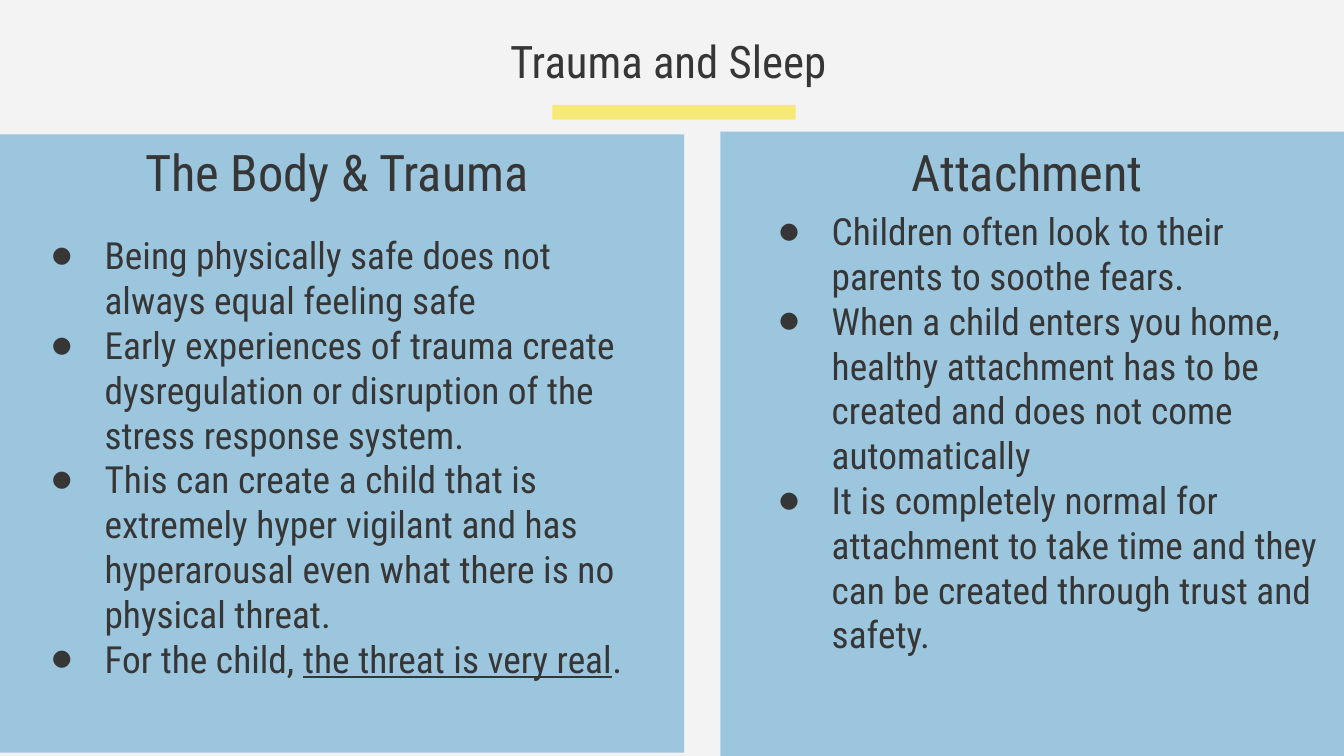
import pptx
import pptx.dml.color
import pptx.enum.shapes
import pptx.enum.text
import pptx.oxml
import pptx.oxml.ns
import pptx.util

Inches = pptx.util.Inches
RGBColor = pptx.dml.color.RGBColor
Anchor = pptx.enum.text.MSO_ANCHOR

BACKGROUND = RGBColor(0xF3, 0xF3, 0xF3)
PANEL_BLUE = RGBColor(0x9C, 0xC6, 0xDE)
ACCENT_YELLOW = RGBColor(0xF6, 0xE9, 0x77)
TEXT_GREY = RGBColor(0x36, 0x36, 0x36)

BODY_POINTS = [
    ["Being physically safe does not always equal feeling safe"],
    ["Early experiences of trauma create dysregulation or disruption of the stress response system."],
    ["This can create a child that is extremely hyper vigilant and has hyperarousal "
     "even what there is no physical threat."],
    ["For the child, ", ("the threat is very real", True), "."],
]
ATTACHMENT_POINTS = [
    ["Children often look to their parents to soothe fears."],
    ["When a child enters you home, healthy attachment has to be created and does not come automatically"],
    ["It is completely normal for attachment to take time and they can be created through trust and safety."],
]


class SlideBuilder:
    """Holds the text style and the current slide, and adds elements to it."""

    font_name = "Roboto Condensed"
    body_size = 20
    hanging = 0.39
    bullet_scale = 60

    def __init__(self, slide):
        self.slide = slide

    def background(self, color):
        fill = self.slide.background.fill
        fill.solid()
        fill.fore_color.rgb = color

    def rectangle(self, left, top, width, height, color):
        shape = self.slide.shapes.add_shape(
            pptx.enum.shapes.MSO_SHAPE.RECTANGLE,
            Inches(left), Inches(top), Inches(width), Inches(height))
        shape.shadow.inherit = False
        shape.fill.solid()
        shape.fill.fore_color.rgb = color
        shape.line.fill.background()

    def text_frame(self, left, top, width, height, anchor=Anchor.TOP):
        shape = self.slide.shapes.add_textbox(
            Inches(left), Inches(top), Inches(width), Inches(height))
        frame = shape.text_frame
        frame.word_wrap = True
        frame.vertical_anchor = anchor
        frame.margin_left = frame.margin_right = Inches(0.1)
        frame.margin_top = frame.margin_bottom = Inches(0.1)
        return frame

    def run(self, paragraph, text, size, underline=False):
        run = paragraph.add_run()
        run.text = text
        run.font.name = self.font_name
        run.font.size = pptx.util.Pt(size)
        run.font.color.rgb = TEXT_GREY
        if underline:
            run.font.underline = True

    def heading(self, left, top, width, height, text, size, anchor=Anchor.TOP):
        paragraph = self.text_frame(left, top, width, height, anchor).paragraphs[0]
        paragraph.alignment = pptx.enum.text.PP_ALIGN.CENTER
        self.run(paragraph, text, size)

    def bullet(self, paragraph, indent):
        properties = paragraph._p.get_or_add_pPr()
        properties.set("marL", str(Inches(indent)))
        properties.set("indent", str(-Inches(self.hanging)))
        namespace = pptx.oxml.ns.nsdecls("a")
        for xml in (f'<a:buClr {namespace}><a:srgbClr val="{TEXT_GREY}"/></a:buClr>',
                    f'<a:buSzPct {namespace} val="{self.bullet_scale * 1000}"/>',
                    f'<a:buFont {namespace} typeface="{self.font_name}"/>',
                    f'<a:buChar {namespace} char="●"/>'):
            properties.append(pptx.oxml.parse_xml(xml))

    def bullet_list(self, left, top, width, height, points, indent):
        frame = self.text_frame(left, top, width, height)
        for index, point in enumerate(points):
            paragraph = frame.add_paragraph() if index else frame.paragraphs[0]
            self.bullet(paragraph, indent)
            for part in point:
                text, underline = (part, False) if isinstance(part, str) else part
                self.run(paragraph, text, self.body_size, underline)


def main():
    presentation = pptx.Presentation()
    presentation.slide_width = Inches(10)
    presentation.slide_height = Inches(10 * 9 / 16)
    builder = SlideBuilder(presentation.slides.add_slide(presentation.slide_layouts[6]))

    builder.background(BACKGROUND)
    builder.rectangle(4.11, 0.78, 1.81, 0.11, ACCENT_YELLOW)
    builder.heading(0.35, 0.15, 9.32, 0.63, "Trauma and Sleep ", 24)

    builder.rectangle(0, 1, 5.09, 4.6, PANEL_BLUE)
    builder.heading(0.83, 1.1, 3.44, 0.5, "The Body & Trauma ", 27, Anchor.BOTTOM)
    builder.bullet_list(0.18, 1.63, 4.74, 0.63, BODY_POINTS, 0.5)

    builder.rectangle(5.36, 0.98, 4.64, 4.65, PANEL_BLUE)
    builder.bullet_list(5.09, 1.45, 4.91, 1.5, ATTACHMENT_POINTS, 1)
    builder.heading(5.75, 1.1, 3.87, 0.5, "Attachment ", 27, Anchor.BOTTOM)

    presentation.save("out.pptx")


if __name__ == "__main__":
    main()
